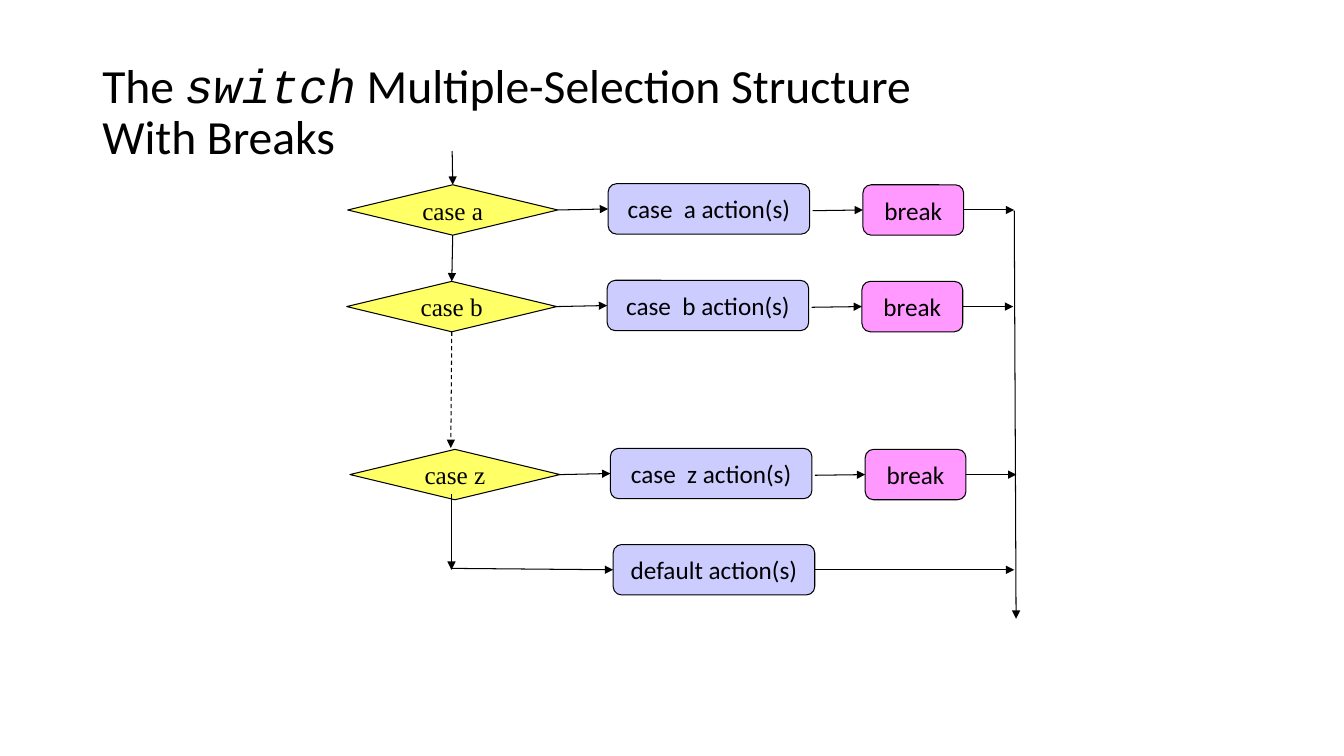
"""Builds a flowchart slide of the switch structure with breaks."""
from lxml.etree import SubElement
from pptx import Presentation
from pptx.dml.color import RGBColor
from pptx.enum.dml import MSO_LINE
from pptx.enum.shapes import MSO_CONNECTOR, MSO_SHAPE
from pptx.enum.text import MSO_ANCHOR, PP_ALIGN
from pptx.oxml.ns import qn
from pptx.util import Pt

BLACK = RGBColor(0x00, 0x00, 0x00)
YELLOW = RGBColor(0xFF, 0xFF, 0x66)
LAVENDER = RGBColor(0xCC, 0xCC, 0xFF)
PINK = RGBColor(0xFF, 0x99, 0xFF)

TOP, LEFT, BOTTOM, RIGHT = range(4)
BOX_HEIGHT = 36
MIDDLE = BOX_HEIGHT / 2
RAIL_X = 724.5
CASES = [("a", 248.4, 132), ("b", 247.7, 201), ("z", 250, 321)]


def apply(target, values):
    for name, value in values.items():
        setattr(target, name, value)


class FlowchartSlide:
    body_size = 18
    title_size = 34
    line_width = 0.75

    def __init__(self, presentation):
        self.slide = presentation.slides.add_slide(presentation.slide_layouts[6])

    def add_text(self, paragraph, text, size, **values):
        run = paragraph.add_run()
        run.text = text
        apply(run.font, {"name": "Calibri", "size": Pt(size), **values})
        run.font.color.rgb = BLACK

    def title(self, left, top, width, height, lines):
        box = self.slide.shapes.add_textbox(Pt(left), Pt(top), Pt(width), Pt(height))
        apply(box.text_frame, {"word_wrap": True, "vertical_anchor": MSO_ANCHOR.MIDDLE})
        paragraph = box.text_frame.paragraphs[0]
        paragraph.line_spacing = 0.9
        for index, line in enumerate(lines):
            if index:
                paragraph.add_line_break()
            for text, values in line:
                self.add_text(paragraph, text, self.title_size, **values)

    def box(self, kind, left, top, width, fill, text, font="Calibri"):
        shape = self.slide.shapes.add_shape(
            kind, Pt(left), Pt(top), Pt(width), Pt(BOX_HEIGHT))
        shape.shadow.inherit = False
        shape.fill.solid()
        shape.fill.fore_color.rgb = fill
        shape.line.color.rgb = BLACK
        shape.line.width = Pt(self.line_width)
        apply(shape.text_frame, {"word_wrap": False, "vertical_anchor": MSO_ANCHOR.MIDDLE})
        paragraph = shape.text_frame.paragraphs[0]
        paragraph.alignment = PP_ALIGN.CENTER
        self.add_text(paragraph, text, self.body_size, name=font)
        return shape

    def decision(self, left, top, text):
        return self.box(MSO_SHAPE.DIAMOND, left, top, 150, YELLOW, text, "Times New Roman")

    def action(self, left, top, text):
        return self.box(MSO_SHAPE.ROUNDED_RECTANGLE, left, top, 144, LAVENDER, text)

    def break_box(self, left, top):
        return self.box(MSO_SHAPE.ROUNDED_RECTANGLE, left, top, 72, PINK, "break")

    def arrow(self, start=(0, 0), end=(0, 0), begin_at=None, end_at=None, dash=None):
        connector = self.slide.shapes.add_connector(
            MSO_CONNECTOR.STRAIGHT, *(Pt(value) for value in (*start, *end)))
        if begin_at:
            connector.begin_connect(*begin_at)
        if end_at:
            connector.end_connect(*end_at)
        connector.line.color.rgb = BLACK
        apply(connector.line, {"width": Pt(self.line_width), "dash_style": dash})
        properties = connector.element.spPr
        SubElement(properties.find(qn("a:ln")), qn("a:tailEnd"), type="triangle")
        SubElement(properties, qn("a:effectLst"))

    def case_row(self, letter, left, top):
        decision = self.decision(left, top, f"case {letter}")
        action = self.action(left + 186, top - 0.75, f"case  {letter} action(s)")
        break_box = self.break_box(left + 368, top)
        center = top + MIDDLE
        self.arrow(begin_at=(decision, RIGHT), end_at=(action, LEFT))
        self.arrow(start=(left + 332, center + 0.5), end_at=(break_box, LEFT))
        self.arrow(end=(left + 476, center), begin_at=(break_box, RIGHT))
        return decision


def main():
    presentation = Presentation()
    apply(presentation, {"slide_width": Pt(960), "slide_height": Pt(540)})
    flowchart = FlowchartSlide(presentation)
    flowchart.title(66, 28.8, 828, 104.4, [
        [("The ", {}),
         ("switch", {"name": "Courier New", "italic": True}),
         (" Multiple-Selection Structure", {})],
        [("With Breaks", {})],
    ])
    case_a, case_b, case_z = [flowchart.case_row(*case) for case in CASES]
    default = flowchart.action(438, 389, "default action(s)")

    flowchart.arrow(start=(323, 108), end_at=(case_a, TOP))
    flowchart.arrow(begin_at=(case_a, BOTTOM), end_at=(case_b, TOP))
    flowchart.arrow(end=(322, 320), begin_at=(case_b, BOTTOM), dash=MSO_LINE.DASH)
    flowchart.arrow(start=(322.5, 353), end=(322.5, 407))
    flowchart.arrow(start=(322, 406), end_at=(default, LEFT))
    flowchart.arrow(end=(RAIL_X, 407), begin_at=(default, RIGHT))
    flowchart.arrow(start=(RAIL_X, 150.5), end=(RAIL_X + 1.3, 442))
    presentation.save("out.pptx")


if __name__ == "__main__":
    main()
